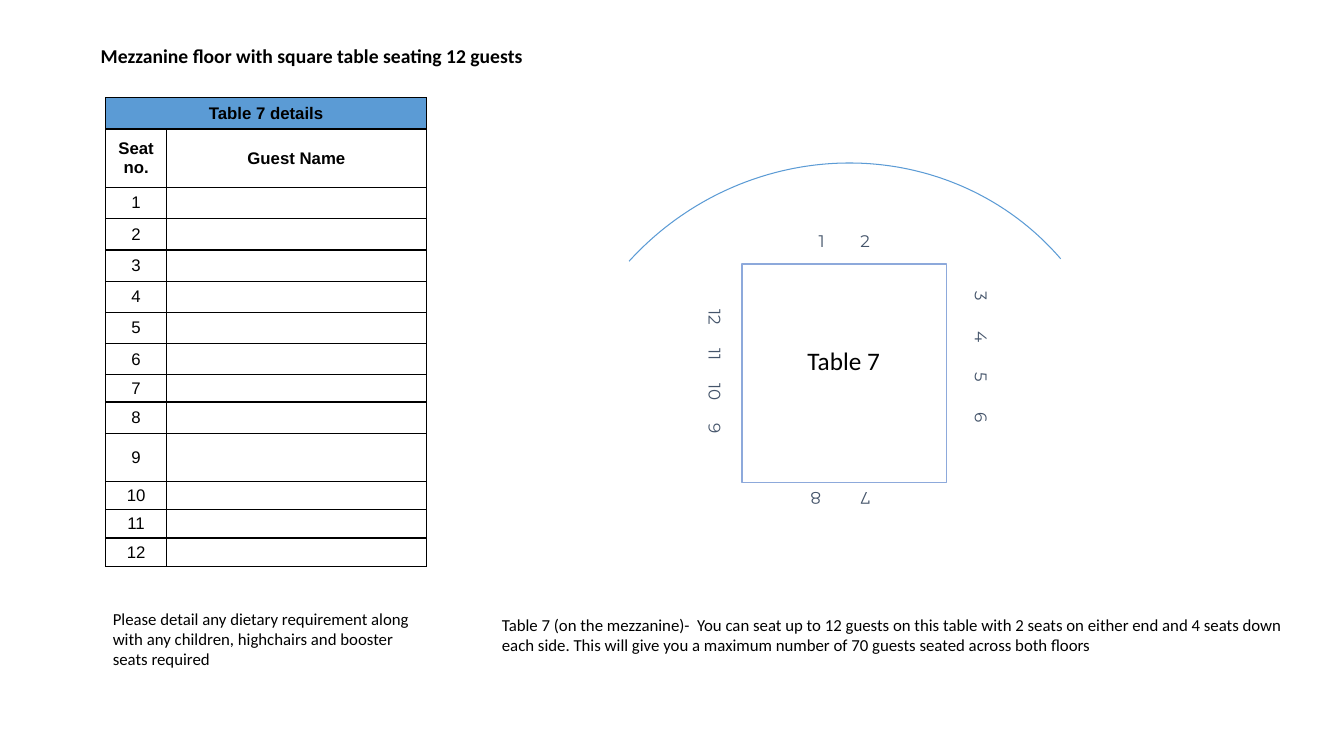
"""Build the seating plan slide for the square mezzanine table."""
from dataclasses import dataclass

from lxml.etree import SubElement
from pptx import Presentation
from pptx.dml.color import RGBColor
from pptx.enum.shapes import MSO_SHAPE as Preset
from pptx.enum.text import MSO_ANCHOR as Anchor, MSO_AUTO_SIZE as AutoSize, PP_ALIGN as Align
from pptx.oxml.ns import qn
from pptx.shapes.autoshape import Shape
from pptx.table import _Cell as Cell
from pptx.text.text import TextFrame
from pptx.util import Inches, Pt

COLORS = {
    "ink": "000000",
    "blue": "5B9BD5",
    "table_edge": "8DA9DB",
    "seat": "44546A",
    "paper": "FFFFFF",
}


@dataclass(frozen=True)
class Box:
    left: float
    top: float
    width: float
    height: float

    def lengths(self) -> tuple:
        return tuple(Inches(v) for v in (self.left, self.top, self.width, self.height))


@dataclass(frozen=True)
class Style:
    size: float
    font: str = "Calibri"
    color: str = "ink"
    bold: bool = False


@dataclass(frozen=True)
class Caption:
    text: str
    box: Box
    style: Style


@dataclass(frozen=True)
class SeatRow:
    seats: tuple
    box: Box
    rotation: int
    first: float
    step: float


BODY = Style(12)
CELL = Style(12, "Arial")
HEADING = Style(12, "Arial", bold=True)
SEAT = Style(12, "Montserrat", "seat")

CAPTIONS = [
    Caption("Please detail any dietary requirement along with any children, "
            "highchairs and booster seats required", Box(1.02, 5.99, 3.18, 0.94), BODY),
    Caption("Table 7 (on the mezzanine)-  You can seat up to 12 guests on this table with "
            "2 seats on either end and 4 seats down each side. This will give you a maximum "
            "number of 70 guests seated across both floors", Box(4.88, 6.05, 7.97, 0.5), BODY),
    Caption("Mezzanine floor with square table seating 12 guests",
            Box(0.9, 0.39, 4.71, 0.34), Style(14, bold=True)),
]
TABLE_NAME = Caption("Table 7", Box(7.91, 3.38, 0.99, 0.4), Style(18))

SEAT_ROWS = [
    SeatRow((7, 8), Box(7.19, 4.81, 2.34, 0.29), 180, 0.95, 0.49),
    SeatRow((12, 11, 10, 9), Box(6.07, 3.48, 2.05, 0.46), 90, 0.46, 0.37),
    SeatRow((3, 4, 5, 6), Box(8.58, 3.42, 2.31, 0.57), 90, 0.39, 0.4),
    SeatRow((1, 2), Box(7.19, 2.24, 2.34, 0.29), 0, 0.96, 0.43),
]

GUEST_COUNT = 12
COLUMN_WIDTHS = (0.6, 2.58)
TITLE_HEIGHT, HEADING_HEIGHT, GUEST_HEIGHT = 0.31, 0.58, 0.31
SPECIAL_HEIGHTS = {7: 0.27, 9: 0.48, 10: 0.28, 11: 0.28, 12: 0.28}


def rgb(name: str) -> RGBColor:
    return RGBColor.from_string(COLORS[name])


def write(frame: TextFrame, text: str, style: Style, align: Align = Align.LEFT) -> None:
    paragraph = frame.paragraphs[0]
    paragraph.text = text
    paragraph.alignment = align
    for run in paragraph.runs:
        run.font.size = Pt(style.size)
        run.font.name = style.font
        run.font.bold = style.bold
        run.font.color.rgb = rgb(style.color)


def add_caption(shapes, caption: Caption) -> None:
    frame = shapes.add_textbox(*caption.box.lengths()).text_frame
    frame.word_wrap = True
    frame.auto_size = AutoSize.SHAPE_TO_FIT_TEXT
    write(frame, caption.text, caption.style)


def add_outline(shapes, preset: Preset, box: Box, color: str, width: float,
                rotation: float) -> Shape:
    outline = shapes.add_shape(preset, *box.lengths())
    outline.shadow.inherit = False
    outline.fill.background()
    outline.line.color.rgb = rgb(color)
    outline.line.width = Pt(width)
    outline.rotation = rotation
    return outline


def add_seat_row(shapes, row: SeatRow) -> None:
    strip = shapes.add_shape(Preset.RECTANGLE, *row.box.lengths())
    strip.shadow.inherit = False
    strip.fill.solid()
    strip.fill.fore_color.rgb = rgb("paper")
    strip.line.fill.background()
    strip.rotation = row.rotation
    frame = strip.text_frame
    frame.margin_left = frame.margin_right = frame.margin_top = frame.margin_bottom = 0
    frame.vertical_anchor = Anchor.MIDDLE
    write(frame, "".join(f"\t{seat}" for seat in row.seats), SEAT)
    stops = SubElement(frame.paragraphs[0]._p.get_or_add_pPr(), qn("a:tabLst"))
    for index in range(len(row.seats)):
        position = Inches(row.first + index * row.step)
        SubElement(stops, qn("a:tab"), pos=str(position), algn="ctr")


def format_cell(cell: Cell, text: str, style: Style, fill: str = "") -> None:
    cell.margin_left = cell.margin_right = cell.margin_top = cell.margin_bottom = 0
    cell.vertical_anchor = Anchor.MIDDLE
    write(cell.text_frame, text, style, Align.CENTER)
    if not text:
        SubElement(cell.text_frame.paragraphs[0]._p, qn("a:endParaRPr"),
                   sz=str(int(style.size * 100)))
    properties = cell._tc.get_or_add_tcPr()
    for side in ("lnL", "lnR", "lnT", "lnB"):
        border = SubElement(properties, qn(f"a:{side}"), w=str(Pt(1)))
        solid = SubElement(border, qn("a:solidFill"))
        SubElement(solid, qn("a:srgbClr"), val=COLORS["ink"])
    if fill:
        cell.fill.solid()
        cell.fill.fore_color.rgb = rgb(fill)
    else:
        cell.fill.background()


def add_guest_list(shapes) -> None:
    seats = range(1, GUEST_COUNT + 1)
    heights = [TITLE_HEIGHT, HEADING_HEIGHT]
    heights += [SPECIAL_HEIGHTS.get(seat, GUEST_HEIGHT) for seat in seats]
    box = Box(1.05, 0.97, sum(COLUMN_WIDTHS), sum(heights))
    guests = shapes.add_table(len(heights), len(COLUMN_WIDTHS), *box.lengths()).table
    guests.first_row = guests.horz_banding = False
    for column, width in zip(guests.columns, COLUMN_WIDTHS):
        column.width = Inches(width)
    for row, height in zip(guests.rows, heights):
        row.height = Inches(height)
    guests.cell(0, 0).merge(guests.cell(0, 1))
    entries = [("Table 7 details", ""), ("Seat no.", "Guest Name")]
    entries += [(str(seat), "") for seat in seats]
    for row_index, entry in enumerate(entries):
        style = HEADING if row_index < 2 else CELL
        fill = "blue" if row_index == 0 else ""
        for column_index, text in enumerate(entry):
            format_cell(guests.cell(row_index, column_index), text, style, fill)


def main() -> None:
    deck = Presentation()
    deck.slide_width, deck.slide_height = Inches(13.33), Inches(7.5)
    shapes = deck.slides.add_slide(deck.slide_layouts[6]).shapes

    balcony = add_outline(shapes, Preset.ARC, Box(5.43, 1.66, 5.79, 5.59), "blue", 0.75, 319.3)
    balcony.adjustments[0] = 157.49
    balcony.adjustments[1] = 0
    add_guest_list(shapes)

    seating = shapes.add_group_shape().shapes
    add_outline(seating, Preset.RECTANGLE, Box(7.29, 2.69, 2.17, 2.03), "table_edge", 1, 90)
    for row in SEAT_ROWS:
        add_seat_row(seating, row)
    add_caption(seating, TABLE_NAME)
    for caption in CAPTIONS:
        add_caption(shapes, caption)
    deck.save("out.pptx")


if __name__ == "__main__":
    main()
